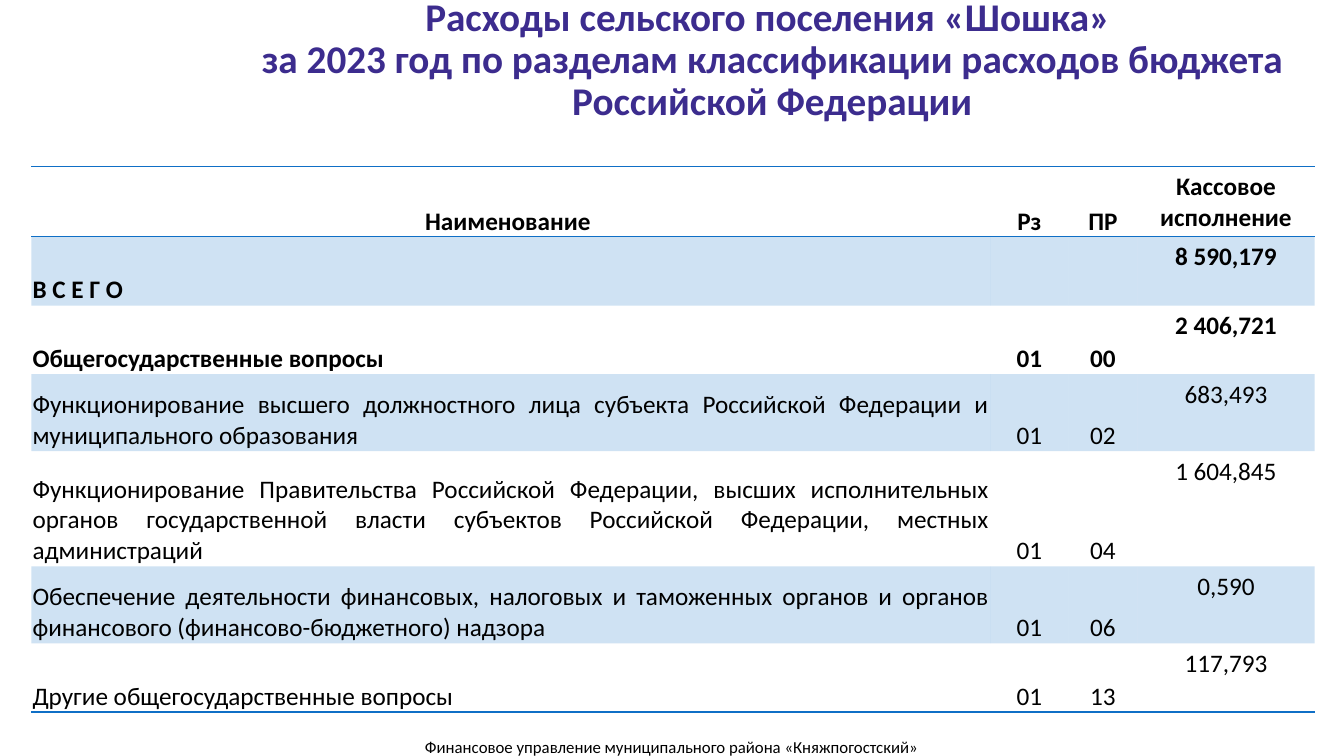
from lxml import etree
from pptx import Presentation
from pptx.dml.color import RGBColor
from pptx.enum.text import MSO_ANCHOR, PP_ALIGN
from pptx.oxml.ns import qn
from pptx.util import Cm, Pt

CENTER, LEFT, JUSTIFY = PP_ALIGN.CENTER, PP_ALIGN.LEFT, PP_ALIGN.JUSTIFY
TOP, MIDDLE, BOTTOM = MSO_ANCHOR.TOP, MSO_ANCHOR.MIDDLE, MSO_ANCHOR.BOTTOM
FONT = "Calibri"
COLORS = {"title": "3C2C8E", "text": "000000", "accent": "0F6FC6"}
BAND_ALPHA = 20000

COLUMN_WIDTHS = [24.16, 1.98, 1.73, 4.47]
ROW_HEIGHTS = [1.75, 1.73, 1.73, 1.94, 2.9, 1.94, 1.73]
ROWS = [
    ("Наименование ", "Рз", "ПР", "Кассовое исполнение"),
    ("В С Е Г О", "", "", "8 590,179"),
    ("Общегосударственные вопросы", "01", "00", "2 406,721"),
    ("Функционирование высшего должностного лица субъекта Российской Федерации "
     "и муниципального образования", "01", "02", "683,493"),
    ("Функционирование Правительства Российской Федерации, высших исполнительных "
     "органов государственной власти субъектов Российской Федерации, "
     "местных администраций", "01", "04", "1 604,845"),
    ("Обеспечение деятельности финансовых, налоговых и таможенных органов и органов "
     "финансового (финансово-бюджетного) надзора", "01", "06", "0,590"),
    ("Другие общегосударственные вопросы", "01", "13", "117,793"),
]
NAME_ALIGNMENTS = [CENTER, LEFT] + [JUSTIFY] * 5
BOLD_ROWS = 3


def style_text(frame, size, color, bold, align):
    for para in frame.paragraphs:
        para.alignment = align
        para.font.size = Pt(size)
        for span in para.runs:
            span.font.name = FONT
            span.font.size = Pt(size)
            span.font.bold = bold
            span.font.color.rgb = RGBColor.from_string(COLORS[color])


def add_text(page, text, left, top, width, height, size, color, bold=False, spacing=1.0):
    box = page.shapes.add_textbox(Cm(left), Cm(top), Cm(width), Cm(height))
    frame = box.text_frame
    frame.word_wrap = True
    frame.vertical_anchor = MIDDLE
    frame.text = text
    frame.paragraphs[0].line_spacing = spacing
    style_text(frame, size, color, bold, CENTER)


def set_borders(cell, visible):
    properties = cell._tc.get_or_add_tcPr()
    for side in ("lnL", "lnR", "lnT", "lnB"):
        line = etree.SubElement(properties, qn(f"a:{side}"), w=str(Pt(1)))
        if side in visible:
            fill = etree.SubElement(line, qn("a:solidFill"))
            etree.SubElement(fill, qn("a:srgbClr"), val=COLORS["accent"])
        else:
            etree.SubElement(line, qn("a:noFill"))


def fill_cell(cell, banded):
    if not banded:
        cell.fill.background()
        return
    cell.fill.solid()
    cell.fill.fore_color.rgb = RGBColor.from_string(COLORS["accent"])
    color = cell._tc.tcPr.find(qn("a:solidFill")).find(qn("a:srgbClr"))
    etree.SubElement(color, qn("a:alpha"), val=str(BAND_ALPHA))


def visible_borders(row):
    if row == 0:
        return ("lnT", "lnB")
    if row == 1:
        return ("lnT",)
    return ("lnB",) if row == len(ROWS) - 1 else ()


def add_expense_table(page, left, top):
    frame = page.shapes.add_table(
        len(ROWS), len(COLUMN_WIDTHS), Cm(left), Cm(top),
        Cm(sum(COLUMN_WIDTHS)), Cm(sum(ROW_HEIGHTS)))
    table = frame.table
    table.first_row = False
    table.horz_banding = False
    for column, width in zip(table.columns, COLUMN_WIDTHS):
        column.width = Cm(width)
    for row, height in enumerate(ROW_HEIGHTS):
        table.rows[row].height = Cm(height)
        for column, text in enumerate(ROWS[row]):
            cell = table.cell(row, column)
            cell.text = text
            if column < 3:
                cell.vertical_anchor = BOTTOM
                cell.margin_left = cell.margin_right = cell.margin_top = Cm(0.03)
                cell.margin_bottom = 0
            else:
                cell.vertical_anchor = TOP
            align = NAME_ALIGNMENTS[row] if column == 0 else CENTER
            style_text(cell.text_frame, 18, "text", row < BOLD_ROWS, align)
            set_borders(cell, visible_borders(row))
            fill_cell(cell, row % 2 == 1)


def main():
    deck = Presentation()
    deck.slide_width, deck.slide_height = Cm(33.87), Cm(19.05)
    page = deck.slides.add_slide(deck.slide_layouts[6])
    add_text(page, "Расходы сельского поселения «Шошка» \vза 2023 год по разделам "
             "классификации расходов бюджета Российской Федерации",
             5.44, 0.05, 28.04, 2.97, 28, "title", bold=True, spacing=0.9)
    add_expense_table(page, 0.79, 4.19)
    add_text(page, "Финансовое управление муниципального района «Княжпогостский»",
             6.3, 18.31, 21.26, 1.02, 12, "text")
    deck.save("out.pptx")


if __name__ == "__main__":
    main()
